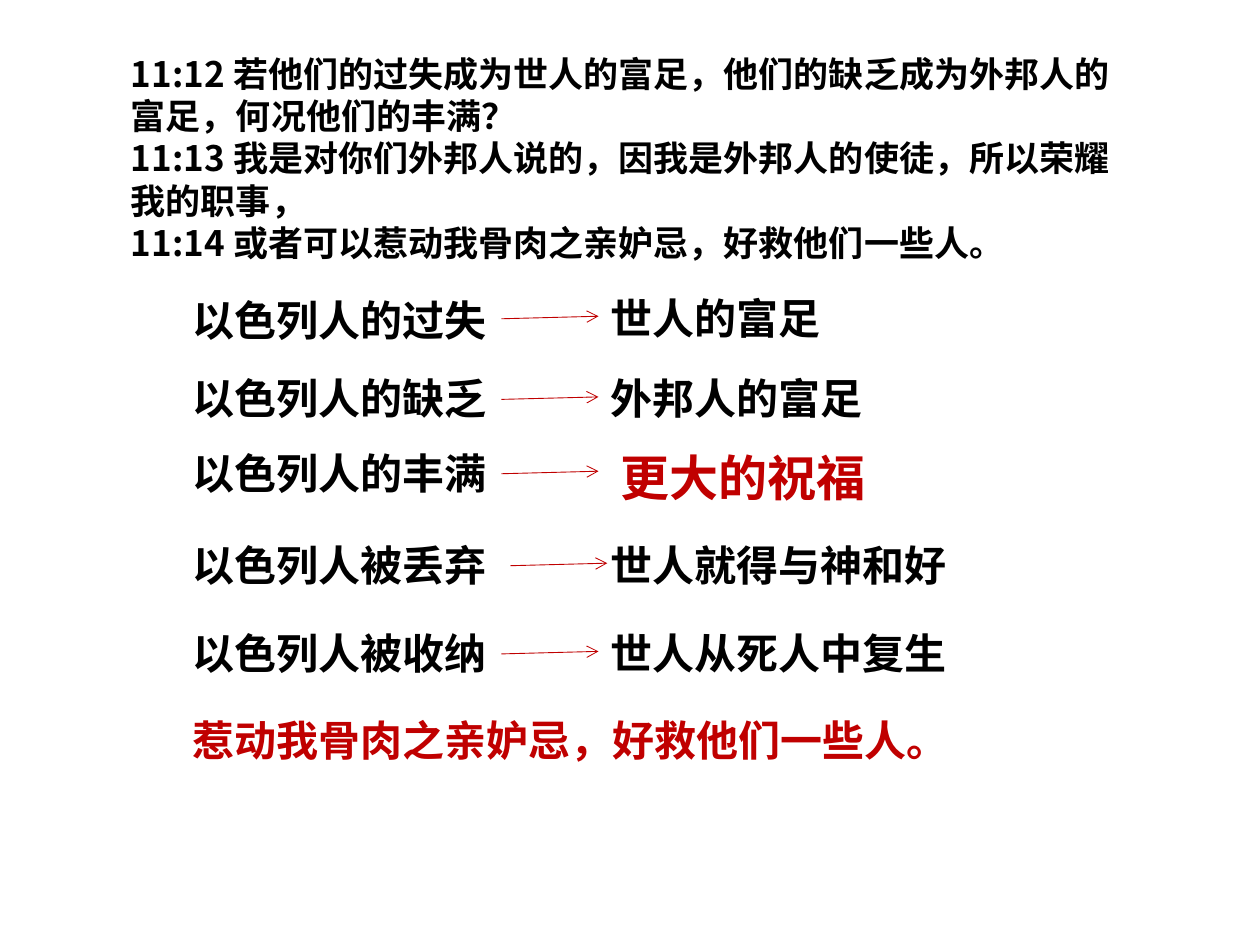
from dataclasses import dataclass

from lxml import etree
from pptx import Presentation
from pptx.dml.color import RGBColor
from pptx.enum.lang import MSO_LANGUAGE_ID
from pptx.enum.shapes import MSO_CONNECTOR
from pptx.enum.text import MSO_AUTO_SIZE
from pptx.oxml.ns import qn
from pptx.util import Inches, Pt

STRAIGHT = MSO_CONNECTOR.STRAIGHT
FIT_SHAPE = MSO_AUTO_SIZE.SHAPE_TO_FIT_TEXT
CHINESE = MSO_LANGUAGE_ID.SIMPLIFIED_CHINESE


@dataclass(frozen=True)
class Theme:
    ink: RGBColor = RGBColor(0, 0, 0)
    accent: RGBColor = RGBColor(0xC0, 0, 0)
    label_font: str = "Calibri"
    verse_font: str = "Noto Sans CJK SC"
    verse_size: int = 20
    verse_leading: int = 24
    label_size: int = 24
    highlight_size: int = 28
    arrow_width: float = 0.5


class SlideBuilder:
    def __init__(self, slide, theme):
        self.slide = slide
        self.theme = theme

    def text(self, content, left, top, width, height, size, color, font, wrap=True):
        box = self.slide.shapes.add_textbox(
            Inches(left), Inches(top), Inches(width), Inches(height))
        frame = box.text_frame
        frame.text = content
        frame.word_wrap = wrap
        frame.auto_size = FIT_SHAPE
        for paragraph in frame.paragraphs:
            for run in paragraph.runs:
                run.font.name = font
                run.font.size = Pt(size)
                run.font.bold = True
                run.font.color.rgb = color
                run.font.language_id = CHINESE
        return frame

    def label(self, content, left, top, width, wrap=True, color=None):
        self.text(content, left, top, width, 0.5, self.theme.label_size,
                  color or self.theme.ink, self.theme.label_font, wrap)

    def highlight(self, content, left, top, width):
        self.text(content, left, top, width, 0.57, self.theme.highlight_size,
                  self.theme.accent, self.theme.label_font, wrap=False)

    def verses(self, lines, left, top, width, height):
        frame = self.text("\n".join(lines), left, top, width, height,
                          self.theme.verse_size, self.theme.ink, self.theme.verse_font)
        frame.margin_top = Inches(0.08)
        for verse in frame.paragraphs:
            verse.line_spacing = Pt(self.theme.verse_leading)

    def arrow(self, left, top, width=0.77, rise=0.02):
        arrow = self.slide.shapes.add_connector(
            STRAIGHT, Inches(left), Inches(top), Inches(left + width), Inches(top - rise))
        arrow.line.color.rgb = self.theme.accent
        arrow.line.width = Pt(self.theme.arrow_width)
        etree.SubElement(arrow.line._get_or_add_ln(), qn("a:tailEnd"), type="arrow")
        etree.SubElement(arrow._element.spPr, qn("a:effectLst"))


VERSES = [
    "11:12 若他们的过失成为世人的富足，他们的缺乏成为外邦人的富足，何况他们的丰满？",
    "11:13 我是对你们外邦人说的，因我是外邦人的使徒，所以荣耀我的职事，",
    "11:14 或者可以惹动我骨肉之亲妒忌，好救他们一些人。",
]
CAUSE_LEFT, OUTCOME_LEFT = 1.43, 4.75
ARROW_DROP = 0.26
CAUSES = [
    ("以色列人的过失", 2.29, 2.78, True),
    ("以色列人的缺乏", 2.91, 2.78, True),
    ("以色列人的丰满", 3.5, 2.54, False),
    ("以色列人被丢弃", 4.23, 2.78, True),
    ("以色列人被收纳", 4.93, 2.78, True),
]
OUTCOMES = [
    ("世人的富足", 2.27, 1.87, False),
    ("外邦人的富足", 2.91, 3.23, True),
    ("世人就得与神和好", 4.23, 4.39, True),
    ("世人从死人中复生", 4.93, 4.1, True),
]
ARROWS = [(3.98, 2.27), (3.98, 2.91), (3.98, 3.5), (4.05, 4.23), (3.98, 4.93)]


def main():
    """Build the slide on Israel's fall and the blessing of the nations."""
    deck = Presentation()
    deck.slide_width, deck.slide_height = Inches(10), Inches(7.5)
    theme = Theme()
    builder = SlideBuilder(deck.slides.add_slide(deck.slide_layouts[6]), theme)

    builder.verses(VERSES, 0.94, 0.34, 8.12, 1.78)
    for left, entries in ((CAUSE_LEFT, CAUSES), (OUTCOME_LEFT, OUTCOMES)):
        for content, top, width, wrap in entries:
            builder.label(content, left, top, width, wrap)
    builder.highlight("更大的祝福", 4.83, 3.5, 2.15)
    for left, row_top in ARROWS:
        builder.arrow(left, row_top + ARROW_DROP)
    builder.label("惹动我骨肉之亲妒忌，好救他们一些人。",
                  CAUSE_LEFT, 5.62, 7.09, color=theme.accent)

    deck.save("out.pptx")


if __name__ == "__main__":
    main()
